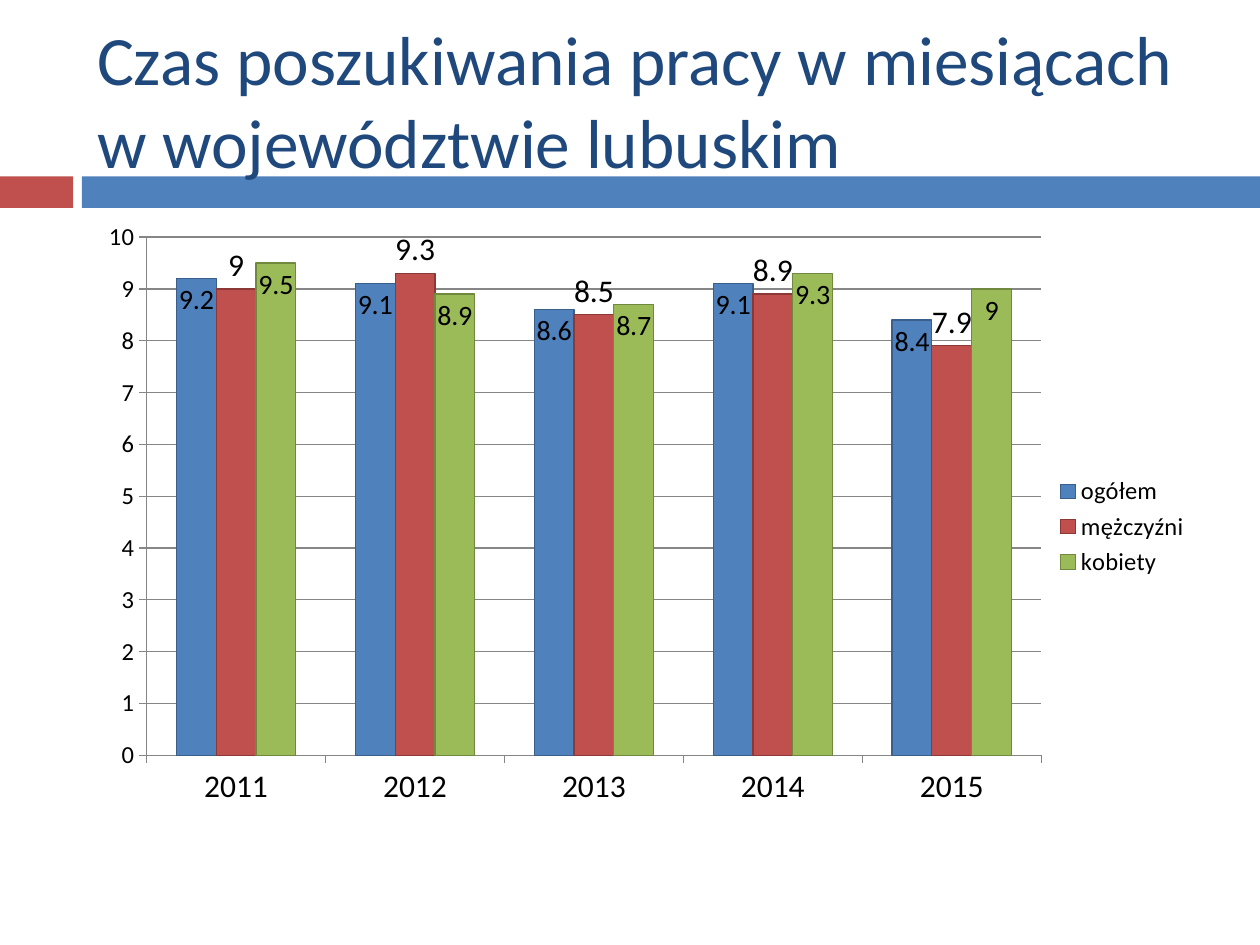
from lxml import etree
from pptx import Presentation
from pptx.chart.data import CategoryChartData
from pptx.dml.color import RGBColor
from pptx.enum import chart as ch, shapes, text
from pptx.oxml import parse_xml
from pptx.oxml.ns import nsdecls
from pptx.util import Inches, Pt

FONT = "Calibri"
NAVY = RGBColor(0x1F, 0x49, 0x7D)
BLUE = RGBColor(0x4F, 0x81, 0xBD)
RED = RGBColor(0xC0, 0x50, 0x4D)
GREEN = RGBColor(0x9B, 0xBB, 0x59)
DARK_BLUE = RGBColor(0x3A, 0x5F, 0x8B)
DARK_RED = RGBColor(0x8C, 0x38, 0x36)
DARK_GREEN = RGBColor(0x71, 0x89, 0x3F)
GREY = RGBColor(0x86, 0x86, 0x86)
BLACK = RGBColor(0, 0, 0)

INSIDE = ch.XL_LABEL_POSITION.INSIDE_END
OUTSIDE = ch.XL_LABEL_POSITION.OUTSIDE_END
YEARS = ["2011", "2012", "2013", "2014", "2015"]
# name, months, fill, outline, label position, label size
SERIES = [
    ("ogółem", (9.2, 9.1, 8.6, 9.1, 8.4), BLUE, DARK_BLUE, INSIDE, 16),
    ("mężczyźni", (9, 9.3, 8.5, 8.9, 7.9), RED, DARK_RED, OUTSIDE, 18),
    ("kobiety", (9.5, 8.9, 8.7, 9.3, 9), GREEN, DARK_GREEN, INSIDE, 16),
]
PLOT_AREA = {"x": 0.061, "y": 0.033, "w": 0.796, "h": 0.836}


def assign(target, values):
    for name, value in values.items():
        setattr(target, name, value)


class SlideBuilder:
    """Holds the style and the slide; boxes are percentages of its size."""

    def __init__(self, deck):
        self.deck = deck
        self.slide = deck.slides.add_slide(deck.slide_layouts[5])

    def box(self, left, top, width, height):
        across, down = self.deck.slide_width, self.deck.slide_height
        return [int(share * side / 100) for share, side in
                zip((left, top, width, height), (across, down) * 2)]

    def style(self, font, size, color=BLACK):
        assign(font, {"name": FONT, "size": Pt(size), "bold": False})
        font.color.rgb = color

    def title(self, wording, box):
        heading = self.slide.shapes.title
        assign(heading, dict(zip(("left", "top", "width", "height"), self.box(*box))))
        frame = heading.text_frame
        frame.text = wording
        assign(frame, {"word_wrap": True, "auto_size": text.MSO_AUTO_SIZE.NONE,
                       "vertical_anchor": text.MSO_ANCHOR.MIDDLE})
        frame.paragraphs[0].alignment = text.PP_ALIGN.LEFT
        self.style(frame.paragraphs[0].runs[0].font, 39.6, NAVY)

    def band(self, box, color):
        strip = self.slide.shapes.add_shape(shapes.MSO_SHAPE.RECTANGLE, *self.box(*box))
        strip.shadow.inherit = False
        strip.fill.solid()
        strip.fill.fore_color.rgb = color
        strip.line.fill.background()
        # Bands lie behind the title
        self.slide.shapes.title.element.addprevious(strip.element)

    def column_chart(self, box, categories, series):
        data = CategoryChartData()
        data.categories = categories
        for name, months, *_ in series:
            data.add_series(name, months)
        chart = self.slide.shapes.add_chart(
            ch.XL_CHART_TYPE.COLUMN_CLUSTERED, *self.box(*box), data).chart
        chart.has_title = False
        self.style(chart.font, 18)

        # Columns and their labels
        plot = chart.plots[0]
        assign(plot, {"gap_width": 150, "overlap": 0, "vary_by_categories": False})
        for columns, (_, _, fill, outline, position, size) in zip(plot.series, series):
            columns.format.fill.solid()
            columns.format.fill.fore_color.rgb = fill
            columns.format.line.color.rgb = outline
            columns.format.line.width = Pt(0.75)
            labels = columns.data_labels
            assign(labels, {"show_value": True, "position": position})
            self.style(labels.font, size)

        # Axes
        for axis, size in ((chart.category_axis, 18), (chart.value_axis, 14)):
            axis.major_tick_mark = ch.XL_TICK_MARK.OUTSIDE
            axis.format.line.color.rgb = GREY
            self.style(axis.tick_labels.font, size)
        assign(chart.value_axis, {"minimum_scale": 0, "maximum_scale": 10,
                                  "major_unit": 1, "has_major_gridlines": True})
        chart.value_axis.major_gridlines.format.line.color.rgb = GREY

        # Legend
        chart.has_legend = True
        assign(chart.legend, {"position": ch.XL_LEGEND_POSITION.RIGHT,
                              "include_in_layout": False})
        self.style(chart.legend.font, 14)
        self.place_plot(chart)

    def place_plot(self, chart):
        area = chart.element.chart.plotArea
        for old in area.findall("{*}layout"):
            area.remove(old)
        layout = parse_xml(f'<c:layout {nsdecls("c")}><c:manualLayout/></c:layout>')
        settings = {"layoutTarget": "inner", "xMode": "edge", "yMode": "edge", **PLOT_AREA}
        namespace = etree.QName(layout).namespace
        for tag, value in settings.items():
            etree.SubElement(layout[0], f"{{{namespace}}}{tag}").set("val", str(value))
        area.insert(0, layout)


def main():
    deck = Presentation()
    assign(deck, {"slide_width": Inches(10), "slide_height": Inches(7.5)})
    page = SlideBuilder(deck)
    # Heading and the two-colour divider
    page.title("Czas poszukiwania pracy w miesiącach w województwie lubuskim",
               (6.7, 3.33, 89.2, 14.4))
    page.band((0, 18.67, 5.8, 3.33), RED)
    page.band((6.5, 18.67, 93.5, 3.33), BLUE)
    # Months of job search by year
    page.column_chart((6.2, 22.93, 89.2, 65.6), YEARS, SERIES)
    deck.save("out.pptx")


if __name__ == "__main__":
    main()
